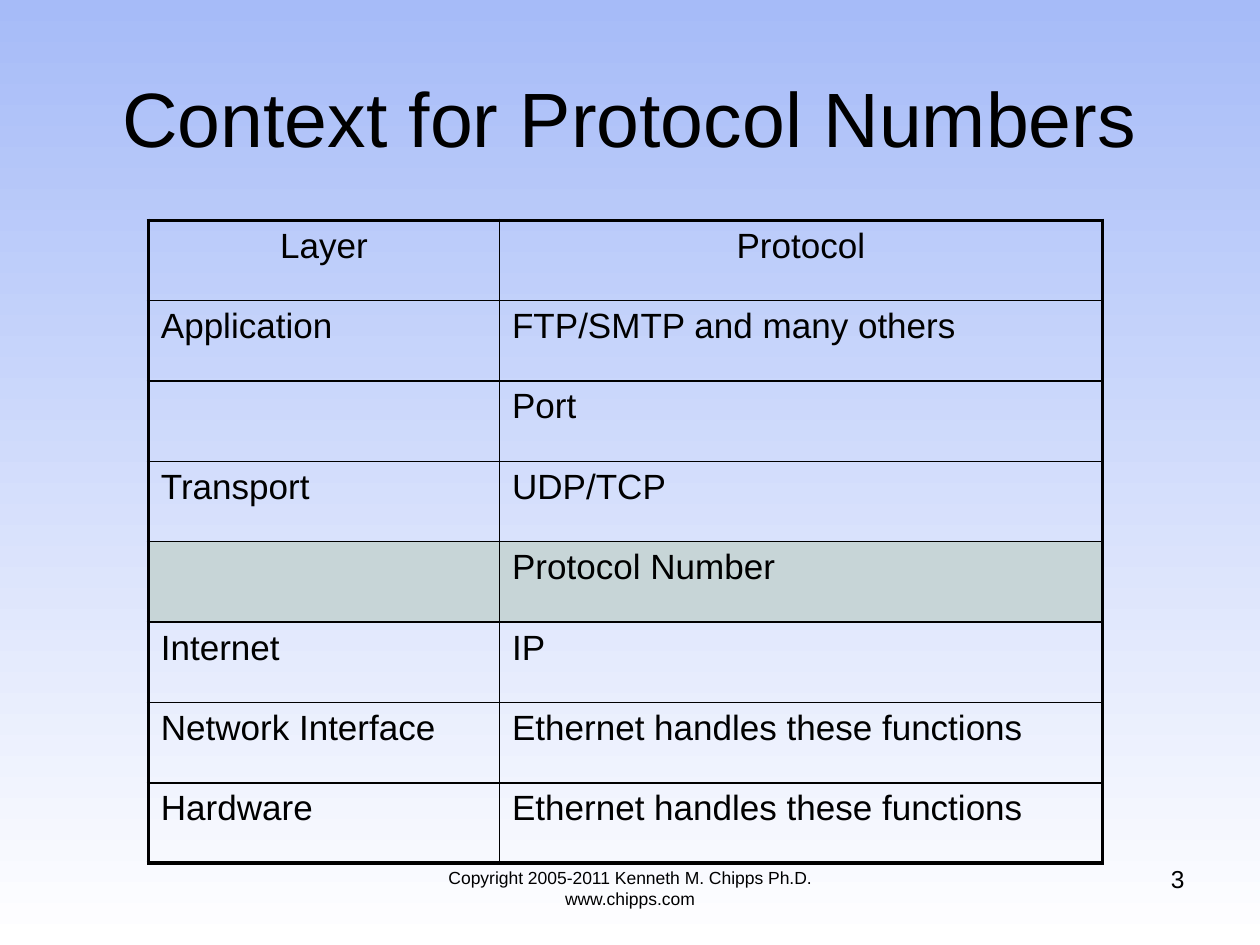
from dataclasses import dataclass

from lxml import etree
from pptx import Presentation
from pptx.dml.color import RGBColor
from pptx.enum.text import MSO_ANCHOR, PP_ALIGN
from pptx.oxml.ns import qn
from pptx.util import Cm, Pt

LEFT, CENTER, RIGHT = PP_ALIGN.LEFT, PP_ALIGN.CENTER, PP_ALIGN.RIGHT
TOP, MIDDLE = MSO_ANCHOR.TOP, MSO_ANCHOR.MIDDLE


@dataclass(frozen=True)
class Theme:
    font: str = "Arial"
    ink: str = "000000"
    sky: str = "A6BBF8"
    white: str = "FFFFFF"
    highlight: str = "C7D5D7"
    title_size: int = 44
    table_size: int = 20
    number_size: int = 14
    footer_size: int = 10
    outer_line: float = 2.25
    inner_line: float = 1


theme = Theme()


def write(frame, text, size, alignment):
    paragraph = frame.paragraphs[0]
    paragraph.text = text
    paragraph.alignment = alignment
    paragraph.font.name = theme.font
    paragraph.font.size = Pt(size)
    paragraph.font.color.rgb = RGBColor.from_string(theme.ink)


def add_border(cell, side, width):
    properties = cell._tc.get_or_add_tcPr()
    line = etree.SubElement(properties, qn(f"a:ln{side}"), w=str(Pt(width)))
    fill = etree.SubElement(line, qn("a:solidFill"))
    etree.SubElement(fill, qn("a:srgbClr"), val=theme.ink)


presentation = Presentation()
presentation.slide_width = Cm(25.4)
presentation.slide_height = Cm(19.05)
slide = presentation.slides.add_slide(presentation.slide_layouts[6])

background = slide.background.fill
background.gradient()
background.gradient_angle = 270
for stop, color, position in zip(background.gradient_stops, (theme.sky, theme.white), (0, 1)):
    stop.color.rgb = RGBColor.from_string(color)
    stop.position = position

texts = [
    ("Context for Protocol Numbers", 1.27, 0.76, 22.86, 3.18, theme.title_size, CENTER, MIDDLE),
    ("Copyright 2005-2011 Kenneth M. Chipps Ph.D. www.chipps.com",
     7.62, 17.35, 10.16, 1.32, theme.footer_size, CENTER, TOP),
    ("3", 18.21, 17.3, 5.92, 1.32, theme.number_size, RIGHT, TOP),
]
for text, left, top, width, height, size, alignment, anchor in texts:
    box = slide.shapes.add_textbox(Cm(left), Cm(top), Cm(width), Cm(height))
    box.text_frame.word_wrap = True
    box.text_frame.vertical_anchor = anchor
    write(box.text_frame, text, size, alignment)

rows = [
    ("Layer", "Protocol"),
    ("Application", "FTP/SMTP and many others"),
    ("", "Port"),
    ("Transport", "UDP/TCP"),
    ("", "Protocol Number"),
    ("Internet", "IP"),
    ("Network Interface", "Ethernet handles these functions"),
    ("Hardware", "Ethernet handles these functions"),
]
highlighted_row = 4
column_widths = (7.08, 12.15)
row_height = 1.62
last_row, last_column = len(rows) - 1, len(column_widths) - 1

table = slide.shapes.add_table(
    len(rows), len(column_widths), Cm(2.99), Cm(4.44),
    Cm(sum(column_widths)), Cm(row_height * len(rows)),
).table
table.first_row = False
table.horz_banding = False
for column, width in zip(table.columns, column_widths):
    column.width = Cm(width)

for row_index, row in enumerate(rows):
    table.rows[row_index].height = Cm(row_height)
    for column_index, text in enumerate(row):
        cell = table.cell(row_index, column_index)
        write(cell.text_frame, text, theme.table_size, CENTER if row_index == 0 else LEFT)
        outer_sides = {
            "L": column_index == 0,
            "R": column_index == last_column,
            "T": row_index == 0,
            "B": row_index == last_row,
        }
        for side, is_outer in outer_sides.items():
            add_border(cell, side, theme.outer_line if is_outer else theme.inner_line)
        if row_index == highlighted_row:
            cell.fill.solid()
            cell.fill.fore_color.rgb = RGBColor.from_string(theme.highlight)
        else:
            cell.fill.background()

presentation.save("out.pptx")
